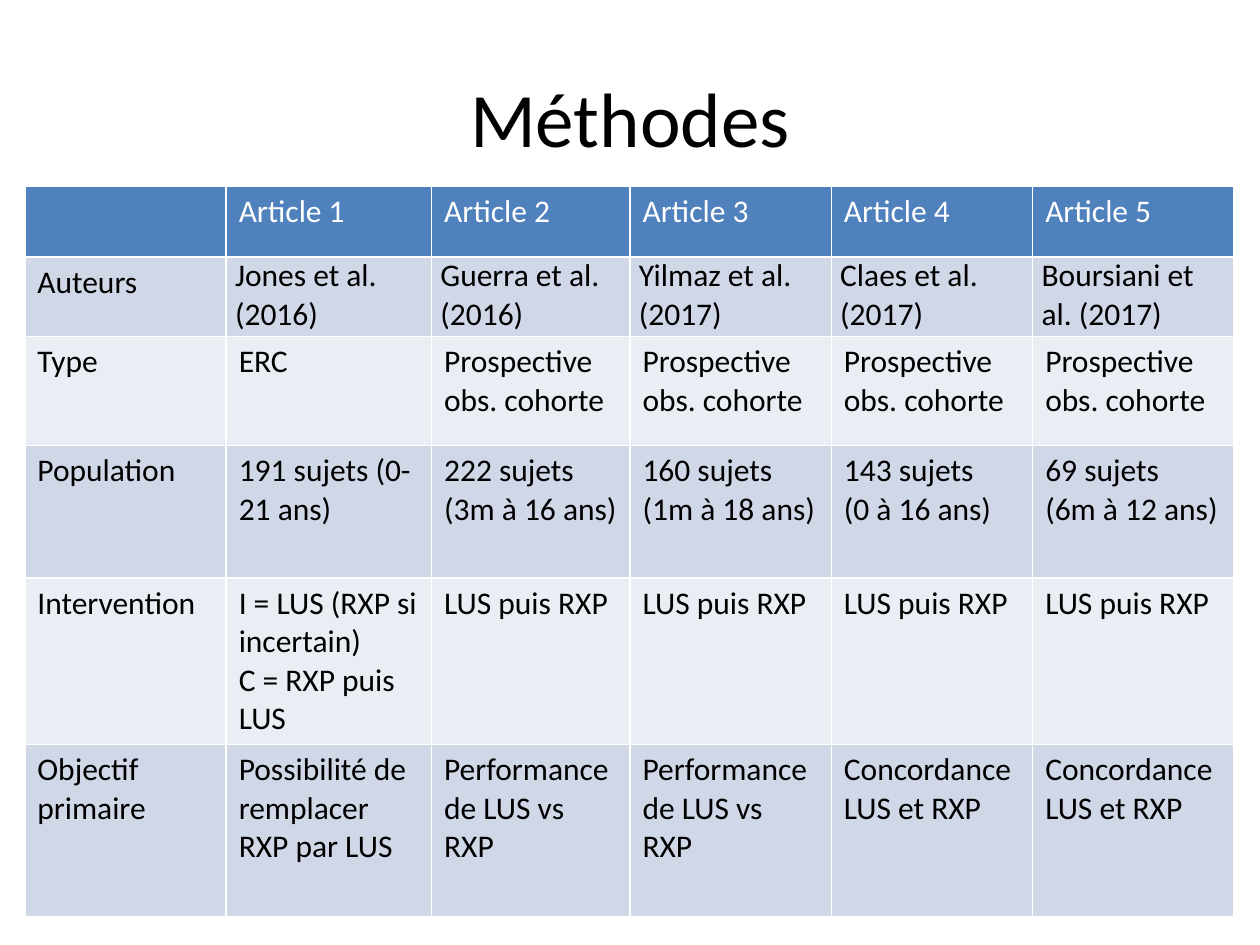
from dataclasses import dataclass

import pptx
import pptx.dml.color
import pptx.enum.text
import pptx.oxml
import pptx.oxml.ns
import pptx.table
import pptx.util
from pptx.util import Cm


@dataclass(frozen=True)
class Theme:
    font: str = "Calibri"
    title: int = 44
    body: int = 18
    line: int = 1
    head: str = "4F81BD"
    bands: tuple[str, str] = ("D0D8E8", "E9EDF4")
    dark: str = "000000"
    light: str = "FFFFFF"


@dataclass(frozen=True)
class Row:
    height: float
    label: str
    items: tuple[str, ...]
    tight: bool = False


THEME = Theme()
WIDTHS = (4.06, 4.14, 4, 4.06, 4.06, 4.06)
COHORT = "Prospective obs. cohorte"
ORDER = "LUS puis RXP"
PERF = "Performance de LUS vs RXP"
MATCH = "Concordance LUS et RXP"
ROWS = (
    Row(1.42, "", tuple(f"Article {n}" for n in range(1, 6))),
    Row(1.6, "Auteurs", (
        "Jones et al. (2016)", "Guerra et al. (2016)", "Yilmaz et al. (2017)",
        "Claes et al. (2017)", "Boursiani et al. (2017)"), tight=True),
    Row(2.2, "Type", ("ERC",) + (COHORT,) * 4),
    Row(2.67, "Population", (
        "191 sujets (0-21 ans)", "222 sujets\v(3m à 16 ans)",
        "160 sujets\v(1m à 18 ans)", "143 sujets\v(0 à 16 ans)",
        "69 sujets\v(6m à 12 ans)")),
    Row(3.36, "Intervention", (
        "I = LUS (RXP si incertain)\nC = RXP puis LUS",) + (ORDER,) * 4),
    Row(3.48, "Objectif primaire", (
        "Possibilité de remplacer RXP par LUS", PERF, PERF, MATCH, MATCH)),
)


def style(frame: pptx.text.text.TextFrame, size: int, tint: str) -> None:
    for para in frame.paragraphs:
        para.font.name = THEME.font
        para.font.size = pptx.util.Pt(size)
        para.font.bold = False
        para.font.color.rgb = pptx.dml.color.RGBColor.from_string(tint)


def edge(cell: pptx.table._Cell) -> None:
    props = cell._tc.get_or_add_tcPr()
    width = pptx.util.Pt(THEME.line)
    for side in "LRTB":
        props.append(pptx.oxml.parse_xml(
            f'<a:ln{side} {pptx.oxml.ns.nsdecls("a")} w="{width}"><a:solidFill>'
            f'<a:srgbClr val="{THEME.light}"/></a:solidFill></a:ln{side}>'))


def fill(cell: pptx.table._Cell, text: str, back: str, tint: str) -> None:
    cell.text = text
    style(cell.text_frame, THEME.body, tint)
    edge(cell)
    cell.fill.solid()
    cell.fill.fore_color.rgb = pptx.dml.color.RGBColor.from_string(back)


def draw(slide: pptx.slide.Slide) -> None:
    high = sum(row.height for row in ROWS)
    grid = slide.shapes.add_table(
        len(ROWS), len(WIDTHS), Cm(0.5), Cm(3.76), Cm(sum(WIDTHS)), Cm(high)).table
    for col, width in zip(grid.columns, WIDTHS):
        col.width = Cm(width)
    for i, row in enumerate(ROWS):
        grid.rows[i].height = Cm(row.height)
        back = THEME.bands[(i - 1) % 2] if i else THEME.head
        tint = THEME.dark if i else THEME.light
        for j, text in enumerate((row.label, *row.items)):
            cell = grid.cell(i, j)
            fill(cell, text, back, tint)
            if row.tight and j:
                cell.margin_left = cell.margin_right = Cm(0.18)
                cell.margin_top = cell.margin_bottom = Cm(0)


def main() -> None:
    deck = pptx.Presentation()
    deck.slide_width, deck.slide_height = Cm(25.4), Cm(19.05)
    slide = deck.slides.add_slide(deck.slide_layouts[5])
    title = slide.shapes.title
    title.left, title.top, title.width, title.height = (
        Cm(1.27), Cm(0.76), Cm(22.86), Cm(3.18))
    title.text = "Méthodes"
    title.text_frame.vertical_anchor = pptx.enum.text.MSO_ANCHOR.MIDDLE
    title.text_frame.paragraphs[0].alignment = pptx.enum.text.PP_ALIGN.CENTER
    style(title.text_frame, THEME.title, THEME.dark)
    draw(slide)
    deck.save("out.pptx")


if __name__ == "__main__":
    main()
